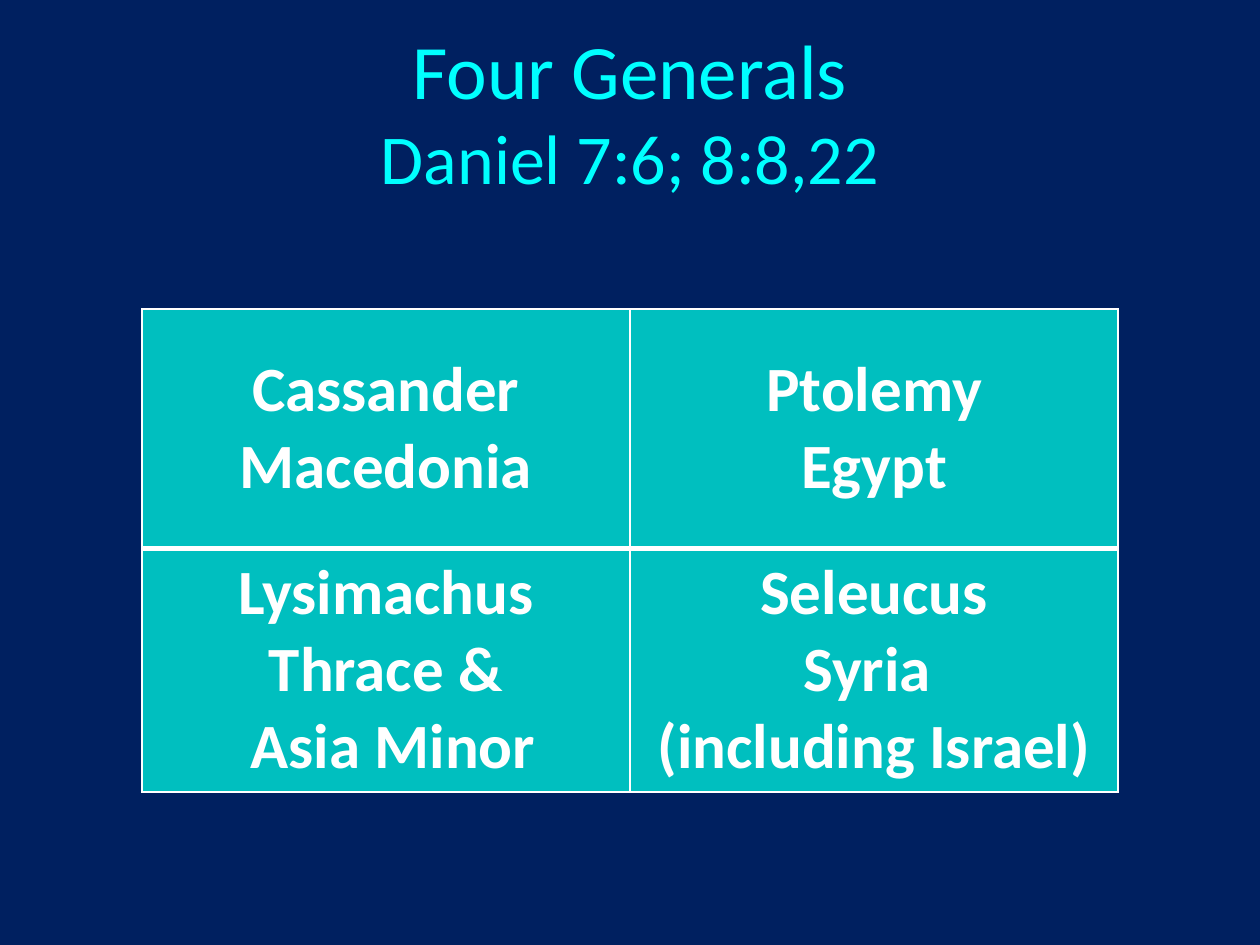
from lxml import etree
from pptx import Presentation
from pptx import util as u
from pptx.dml import color
from pptx.enum import text
from pptx.oxml import ns

Pt = u.Pt
RGB = color.RGBColor.from_string
THEME = {
    "background": "002060", "title": "00FFFF", "cell": "00BFBF", "ink": "FFFFFF",
    "font": "Calibri", "title_size": 44, "verse_size": 40, "cell_size": 36,
    "thin": 1, "thick": 3,
}
GENERALS = [
    [["Cassander", "Macedonia"], ["Ptolemy", "Egypt"]],
    [["Lysimachus", "Thrace &", " Asia Minor"], ["Seleucus", "Syria ", "(including Israel)"]],
]


def add_span(para, words, size, ink, bold):
    span = para.add_run()
    span.text = words
    for name, value in {"name": THEME["font"], "size": Pt(size), "bold": bold}.items():
        setattr(span.font, name, value)
    span.font.color.rgb = RGB(ink)


def set_borders(cell, widths):
    properties = cell._tc.get_or_add_tcPr()
    for index, (side, width) in enumerate(widths.items()):
        line = etree.Element(ns.qn(f"a:ln{side}"), w=str(Pt(width)))
        fill = etree.SubElement(line, ns.qn("a:solidFill"))
        etree.SubElement(fill, ns.qn("a:srgbClr"), val=THEME["ink"])
        properties.insert(index, line)


deck = Presentation()
deck.slide_width, deck.slide_height = Pt(720), Pt(540)
page = deck.slides.add_slide(deck.slide_layouts[5])
page.background.fill.solid()
page.background.fill.fore_color.rgb = RGB(THEME["background"])

title = page.shapes.title
for name, value in {"left": 185, "top": 18, "width": 350, "height": 90}.items():
    setattr(title, name, Pt(value))
box = title.text_frame
for name, value in {
    "word_wrap": True,
    "auto_size": text.MSO_AUTO_SIZE.NONE,
    "vertical_anchor": text.MSO_ANCHOR.MIDDLE,
}.items():
    setattr(box, name, value)
para = box.paragraphs[0]
para.alignment = text.PP_ALIGN.CENTER
add_span(para, "Four Generals", THEME["title_size"], THEME["title"], False)
para.add_line_break()
add_span(para, "Daniel 7:6; 8:8,22", THEME["verse_size"], THEME["title"], False)

table = page.shapes.add_table(2, 2, Pt(81), Pt(176.5), Pt(558), Pt(273.6)).table
for name in ("first_row", "horz_banding"):
    setattr(table, name, False)

for row, generals in enumerate(GENERALS):
    for column, lines in enumerate(generals):
        cell = table.cell(row, column)
        cell.vertical_anchor = text.MSO_ANCHOR.MIDDLE
        cell.fill.solid()
        cell.fill.fore_color.rgb = RGB(THEME["cell"])
        widths = dict.fromkeys("LRTB", THEME["thin"])
        widths["B" if row == 0 else "T"] = THEME["thick"]
        set_borders(cell, widths)
        box = cell.text_frame
        for index, words in enumerate(lines):
            para = box.add_paragraph() if index else box.paragraphs[0]
            para.alignment = text.PP_ALIGN.CENTER
            add_span(para, words, THEME["cell_size"], THEME["ink"], True)

deck.save("out.pptx")
